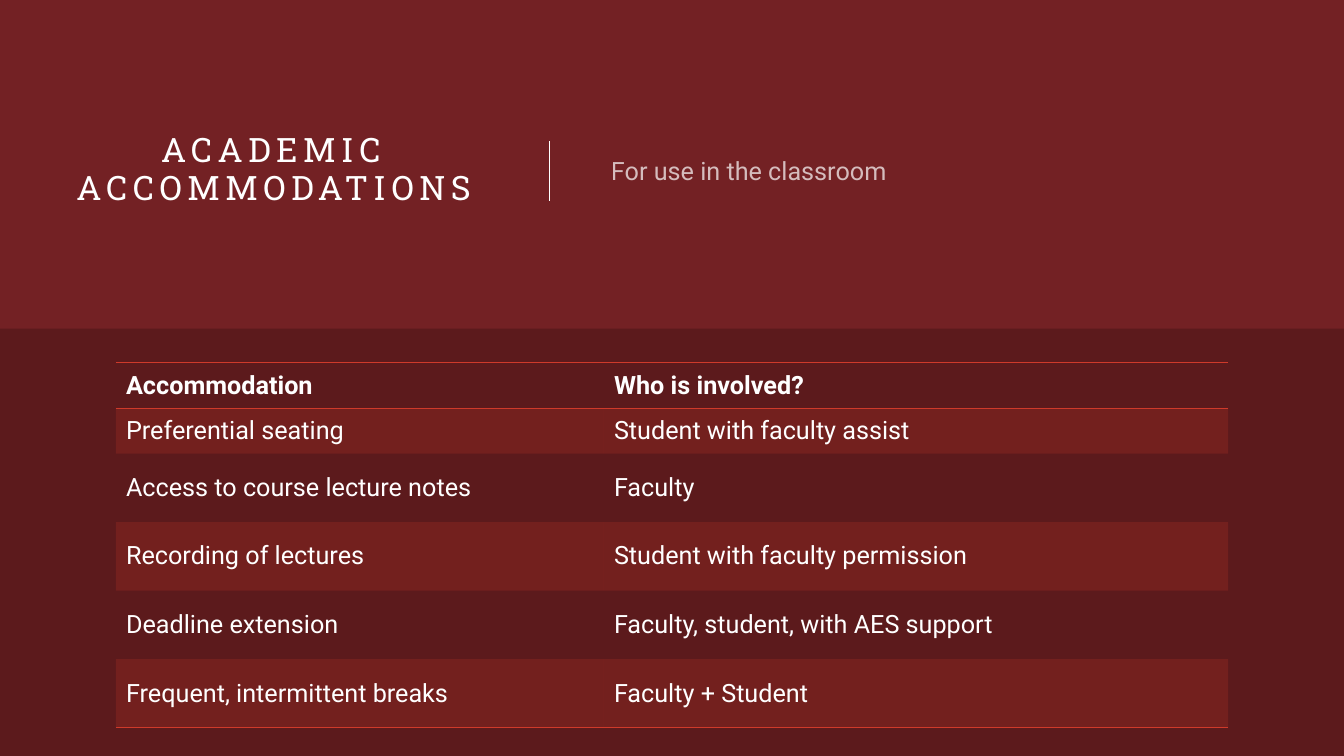
from pptx import Presentation
from pptx.dml.color import RGBColor
from pptx.enum import shapes, text
from pptx.oxml import parse_xml
from pptx.oxml.ns import nsdecls, qn
from pptx.util import Inches, Pt

WINE = RGBColor(0x73, 0x21, 0x24)
BLACK = RGBColor(0, 0, 0)
WHITE = RGBColor(0xFF, 0xFF, 0xFF)
CORAL = RGBColor(0xCF, 0x3A, 0x2A)

NO_STYLE = "{2D5ABB26-0587-4C30-8999-92F81FD0307C}"
COLUMN_WIDTHS = (4.84, 6.19)
ROW_HEIGHTS = (0.45, 0.45, 0.68, 0.68, 0.68, 0.68)
ACCOMMODATIONS = (
    ("Accommodation", "Who is involved?"),
    ("Preferential seating", "Student with faculty assist"),
    ("Access to course lecture notes", "Faculty"),
    ("Recording of lectures", "Student with faculty permission"),
    ("Deadline extension", "Faculty, student, with AES support"),
    ("Frequent, intermittent breaks", "Faculty + Student"),
)


def fill_solid(fill, color, opacity=100):
    """Fill with a colour at an opacity given in percent."""
    fill.solid()
    fill.fore_color.rgb = color
    if opacity < 100:
        set_opacity(fill._xPr, opacity)


def set_opacity(parent, opacity):
    color = parent.find(".//" + qn("a:srgbClr"))
    color.append(parse_xml(f'<a:alpha {nsdecls("a")} val="{opacity * 1000}"/>'))


def style_run(run, size, font="Roboto", bold=False):
    run.font.size = Pt(size)
    run.font.name = font
    run.font.bold = bold
    run.font.color.rgb = WHITE


def add_lower_band(slide):
    band = slide.shapes.add_shape(
        shapes.MSO_SHAPE.RECTANGLE, 0, Inches(3.26), Inches(13.33), Inches(4.24))
    band.shadow.inherit = False
    band.line.fill.background()
    fill_solid(band.fill, BLACK, 20)


def add_divider(slide):
    x = Inches(5.45)
    divider = slide.shapes.add_connector(
        shapes.MSO_CONNECTOR.STRAIGHT, x, Inches(1.4), x, Inches(1.99))
    divider.line.color.rgb = WHITE
    divider.line.width = Pt(1)
    divider._element.spPr.append(parse_xml(f'<a:effectLst {nsdecls("a")}/>'))


def add_heading(slide, wording, left, width, size, font):
    """Add a heading box in the upper area and return its paragraph."""
    box = slide.shapes.add_textbox(
        Inches(left), Inches(0.59), Inches(width), Inches(2.2))
    frame = box.text_frame
    frame.word_wrap = True
    frame.vertical_anchor = text.MSO_ANCHOR.MIDDLE
    frame.margin_left = frame.margin_right = 0
    frame.margin_top = frame.margin_bottom = 0
    frame.text = wording
    paragraph = frame.paragraphs[0]
    style_run(paragraph.runs[0], size, font)
    return paragraph


def add_borders(cell, sides):
    """Draw coral rules on the given sides, T before B."""
    for position, side in enumerate(sides):
        cell._tc.get_or_add_tcPr().insert(position, parse_xml(
            f'<a:ln{side} {nsdecls("a")} w="{Pt(1)}"><a:solidFill>'
            f'<a:srgbClr val="{CORAL}"/></a:solidFill></a:ln{side}>'))


def add_accommodation_table(slide):
    frame = slide.shapes.add_table(
        len(ROW_HEIGHTS), len(COLUMN_WIDTHS), Inches(1.15), Inches(3.6),
        Inches(sum(COLUMN_WIDTHS)), Inches(sum(ROW_HEIGHTS)))
    table = frame.table
    table.first_row = table.horz_banding = False
    table._tbl.tblPr.find(qn("a:tableStyleId")).text = NO_STYLE
    for column, width in zip(table.columns, COLUMN_WIDTHS):
        column.width = Inches(width)

    borders = {0: "TB", len(ROW_HEIGHTS) - 1: "B"}
    for r, (height, wordings) in enumerate(zip(ROW_HEIGHTS, ACCOMMODATIONS)):
        table.rows[r].height = Inches(height)
        for c, wording in enumerate(wordings):
            cell = table.cell(r, c)
            cell.text = wording
            cell.vertical_anchor = text.MSO_ANCHOR.MIDDLE
            style_run(cell.text_frame.paragraphs[0].runs[0], 18, bold=r == 0)
            if r % 2:
                fill_solid(cell.fill, CORAL, 20)
            else:
                cell.fill.background()
            add_borders(cell, borders.get(r, ""))


def main():
    deck = Presentation()
    deck.slide_width, deck.slide_height = Inches(13.33), Inches(7.5)
    slide = deck.slides.add_slide(deck.slide_layouts[6])
    fill_solid(slide.background.fill, WINE)

    add_lower_band(slide)
    add_divider(slide)

    title = add_heading(
        slide, "ACADEMIC ACCOMMODATIONS", 0.59, 4.25, 24, "Roboto Slab")
    title.alignment = text.PP_ALIGN.CENTER
    title.line_spacing = 0.93
    title.runs[0].font._element.set("spc", "400")

    subtitle = add_heading(
        slide, "For use in the classroom", 6.06, 6.68, 18, "Roboto")
    subtitle.space_before = Pt(10)
    set_opacity(subtitle.runs[0].font._element, 70)

    add_accommodation_table(slide)
    deck.save("out.pptx")


if __name__ == "__main__":
    main()
